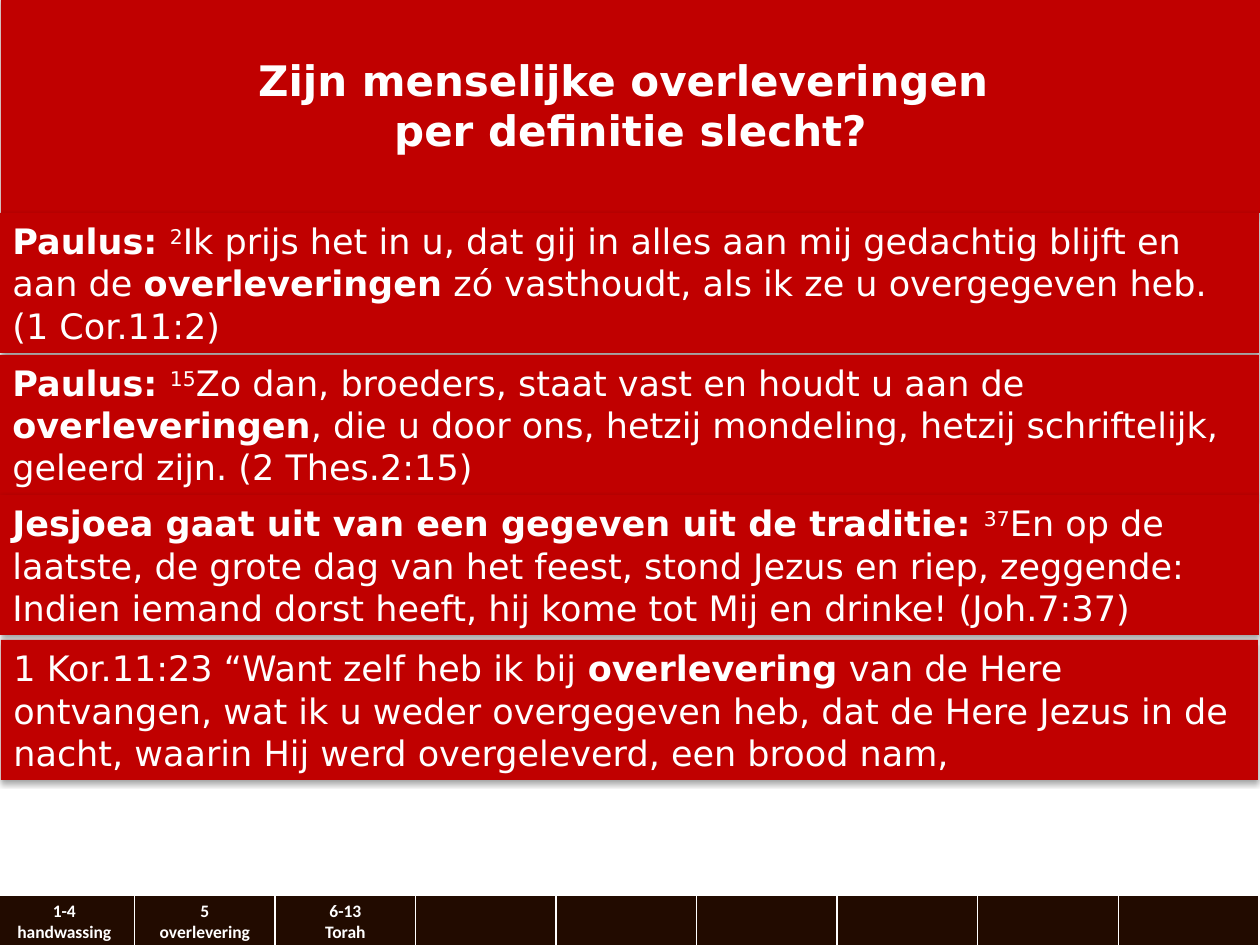
import pptx
import pptx.dml.color
import pptx.enum.shapes
import pptx.enum.text
import pptx.oxml
import pptx.oxml.ns
import pptx.util

PX = 914400 / 126
RED, BROWN, WHITE = "C00000", "220B00", "FFFFFF"
FONT = "DejaVu Sans"
MIDDLE = pptx.enum.text.MSO_ANCHOR.MIDDLE
CENTER = pptx.enum.text.PP_ALIGN.CENTER
LEFT = pptx.enum.text.PP_ALIGN.LEFT

TITLE = "Zijn menselijke overleveringen \nper definitie slecht?"
# Each quote: its box, then runs of (text, style), style being "", "bold" or "super"
QUOTES = [
    ((0, 213, 1259, 140), [
        ("Paulus: ", "bold"), ("2", "super"),
        ("Ik prijs het in u, dat gij in alles aan mij gedachtig blijft en aan de ", ""),
        ("overleveringen", "bold"),
        (" zó vasthoudt, als ik ze u overgegeven heb. (1 Cor.11:2)", "")]),
    ((0, 355, 1259, 140), [
        ("Paulus: ", "bold"), ("15", "super"),
        ("Zo dan, broeders, staat vast en houdt u aan de ", ""),
        ("overleveringen", "bold"),
        (", die u door ons, hetzij mondeling, hetzij schriftelijk, geleerd zijn. "
         "(2 Thes.2:15)", "")]),
    ((0, 495, 1259, 140), [
        ("Jesjoea gaat uit van een gegeven uit de traditie: ", "bold"), ("37", "super"),
        ("En op de laatste, de grote dag van het feest, stond Jezus en riep, zeggende: "
         "Indien iemand dorst heeft, hij kome tot Mij en drinke! (Joh.7:37)", "")]),
    ((1, 640, 1257, 140), [
        ("1 Kor.11:23 “Want zelf heb ik bij ", ""), ("overlevering", "bold"),
        (" van de Here ontvangen, wat ik u weder overgegeven heb, dat de Here Jezus "
         "in de nacht, waarin Hij werd overgeleverd, een brood nam,", "")]),
]
SECTIONS = ["1-4\nhandwassing", "5\noverlevering", "6-13\nTorah"] + [""] * 6


def px(n):
    return pptx.util.Emu(round(n * PX))


def color(hex_string):
    return pptx.dml.color.RGBColor.from_string(hex_string)


def style_font(font, name, size, bold):
    font.name = name
    font.size = pptx.util.Pt(size)
    font.bold = bold
    font.color.rgb = color(WHITE)


def style_panel(sp):
    """Red fill, no outline and a soft shadow below."""
    sp.fill.solid()
    sp.fill.fore_color.rgb = color(RED)
    sp.line.fill.background()
    sp.shadow.inherit = False
    effects = sp._element.spPr.find(pptx.oxml.ns.qn("a:effectLst"))
    effects.append(pptx.oxml.parse_xml(
        f'<a:outerShdw {pptx.oxml.ns.nsdecls("a")} blurRad="39400" dist="22900" '
        'dir="5400000" rotWithShape="0"><a:srgbClr val="000000">'
        '<a:alpha val="35000"/></a:srgbClr></a:outerShdw>'))
    tf = sp.text_frame
    tf.word_wrap = True
    tf.auto_size = pptx.enum.text.MSO_AUTO_SIZE.NONE
    tf.vertical_anchor = MIDDLE


def add_title(slide, box):
    sp = slide.shapes.title
    sp.left, sp.top, sp.width, sp.height = map(px, box)
    style_panel(sp)
    sp.text_frame.text = TITLE
    for p in sp.text_frame.paragraphs:
        p.alignment = CENTER
        for r in p.runs:
            style_font(r.font, FONT, 24, True)


def add_quote(slide, box, parts):
    sp = slide.shapes.add_shape(pptx.enum.shapes.MSO_SHAPE.RECTANGLE, *map(px, box))
    style_panel(sp)
    p = sp.text_frame.paragraphs[0]
    p.alignment = LEFT
    for text, style in parts:
        r = p.add_run()
        r.text = text
        style_font(r.font, FONT, 20, style == "bold")
        if style == "super":
            r.font._element.set("baseline", "30000")


def set_borders(cell):
    tc_pr = cell._tc.get_or_add_tcPr()
    for side, width in (("L", 1), ("R", 1), ("T", 1), ("B", 3)):
        tc_pr.append(pptx.oxml.parse_xml(
            f'<a:ln{side} {pptx.oxml.ns.nsdecls("a")} w="{pptx.util.Pt(width)}">'
            f'<a:solidFill><a:srgbClr val="{WHITE}"/></a:solidFill></a:ln{side}>'))


def add_section_bar(slide, box):
    width = box[2]
    table = slide.shapes.add_table(1, len(SECTIONS), *map(px, box)).table
    for col, cell, text in zip(table.columns, table.rows[0].cells, SECTIONS):
        col.width = px(width / len(SECTIONS))
        set_borders(cell)
        cell.fill.solid()
        cell.fill.fore_color.rgb = color(BROWN)
        cell.vertical_anchor = MIDDLE
        cell.margin_top = cell.margin_bottom = px(5)
        cell.text_frame.text = text
        for p in cell.text_frame.paragraphs:
            p.alignment = CENTER
            for r in p.runs:
                style_font(r.font, "Calibri", 10, True)


def main():
    prs = pptx.Presentation()
    prs.slide_width, prs.slide_height = px(1260), px(945)
    slide = prs.slides.add_slide(prs.slide_layouts[5])
    add_section_bar(slide, (-6, 895, 1265, 54))
    add_title(slide, (1, -4, 1259, 217))
    for box, parts in QUOTES:
        add_quote(slide, box, parts)
    prs.save("out.pptx")


if __name__ == "__main__":
    main()
